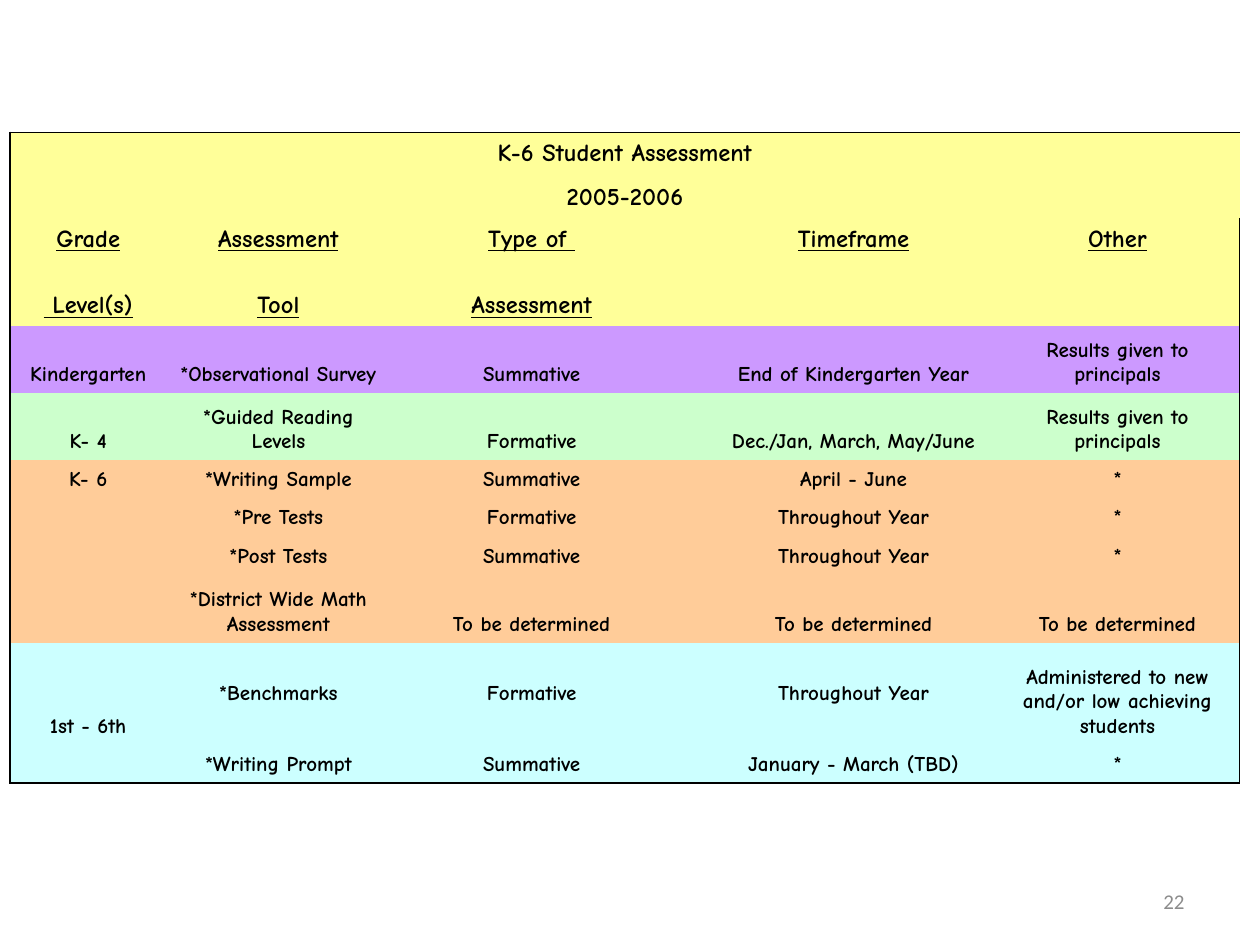
import pptx
import pptx.dml.color
import pptx.enum.text
import pptx.oxml
import pptx.oxml.ns
import pptx.util
from lxml import etree

Inches, Pt = pptx.util.Inches, pptx.util.Pt
RGB = pptx.dml.color.RGBColor.from_string
ALIGN = pptx.enum.text.PP_ALIGN
ANCHOR = pptx.enum.text.MSO_ANCHOR

COLORS = {
    "text": "000000", "border": "000000", "number": "8C8C8C",
    "heading": "FFFF99", "kindergarten": "CC99FF", "k4": "CCFFCC",
    "k6": "FFCC99", "upper": "CCFFFF",
}
NO_STYLE = "{2D5ABB26-0587-4C30-8999-92F81FD0307C}"
COLUMN_WIDTHS = [1.24, 1.78, 2.24, 0.31, 2.25, 1.94]
TEXT_COLUMNS = [0, 1, 2, 4, 5]
TITLE_ROWS, HEADING_ROWS = 2, 4
BENCHMARK_ROW = 10

# Band colour, row height, texts of the columns that hold text
ROWS = [
    ("heading", 0.33, ["K-6 Student Assessment"]),
    ("heading", 0.35, ["2005-2006"]),
    ("heading", 0.33, ["Grade", "Assessment", "Type of ", "Timeframe", "Other"]),
    ("heading", 0.53, [" Level(s)", "Tool", "Assessment", "", ""]),
    ("kindergarten", 0.53, ["Kindergarten", "*Observational Survey", "Summative",
                            "End of Kindergarten Year", "Results given to principals"]),
    ("k4", 0.53, ["K- 4", "*Guided Reading Levels", "Formative",
                  "Dec./Jan, March, May/June", "Results given to principals"]),
    ("k6", 0.3, ["K- 6", "*Writing Sample", "Summative", "April - June", "*"]),
    ("k6", 0.3, ["", "*Pre Tests", "Formative", "Throughout Year", "*"]),
    ("k6", 0.3, ["", "*Post Tests", "Summative", "Throughout Year", "*"]),
    ("k6", 0.54, ["", "*District Wide Math Assessment", "To be determined",
                  "To be determined", "To be determined"]),
    ("upper", 0.81, ["1st - 6th", "*Benchmarks", "Formative", "Throughout Year",
                     "Administered to new and/or low achieving students"]),
    ("upper", 0.3, ["", "*Writing Prompt", "Summative", "January - March (TBD)", "*"]),
]


def write_text(paragraph, text, color, alignment, **font_values):
    paragraph.alignment = alignment
    run = paragraph.add_run()
    run.text = text
    run.font.color.rgb = RGB(color)
    for name, value in font_values.items():
        setattr(run.font, name, value)


def keep_empty_line_small(paragraph):
    """An empty cell would otherwise stretch its row to fit 18 pt text."""
    end = etree.SubElement(paragraph._p, pptx.oxml.ns.qn("a:endParaRPr"))
    end.set("sz", "1200")


def add_borders(cell, sides):
    """Line the given sides (L, R, T, B, in that order) ahead of the cell's fill."""
    properties = cell._tc.get_or_add_tcPr()
    for index, side in enumerate(sides):
        properties.insert(index, pptx.oxml.parse_xml(
            f'<a:ln{side} {pptx.oxml.ns.nsdecls("a")} w="12700"><a:solidFill>'
            f'<a:srgbClr val="{COLORS["border"]}"/></a:solidFill></a:ln{side}>'))


def outer_sides(row, column):
    last_column, last_row = len(COLUMN_WIDTHS) - 1, len(ROWS) - 1
    tests = {
        "L": column == 0,
        "R": column == last_column and row >= TITLE_ROWS,
        "T": row == 0,
        "B": row == last_row,
    }
    return [side for side, applies in tests.items() if applies]


def fill_cell(cell, text, row, column, band):
    cell.fill.solid()
    cell.fill.fore_color.rgb = RGB(COLORS[band])
    centred = row == BENCHMARK_ROW and column in (1, 2, 4)
    cell.vertical_anchor = ANCHOR.MIDDLE if centred else ANCHOR.BOTTOM
    cell.margin_left = cell.margin_right = Inches(0.08)
    add_borders(cell, outer_sides(row, column))
    paragraph = cell.text_frame.paragraphs[0]
    if text:
        write_text(paragraph, text, COLORS["text"], ALIGN.CENTER,
                   name="Comic Neue", bold=True,
                   size=Pt(14 if row < HEADING_ROWS else 12),
                   underline=TITLE_ROWS <= row < HEADING_ROWS)
    else:
        keep_empty_line_small(paragraph)


def add_assessment_table(slide, left, top):
    width = sum(COLUMN_WIDTHS)
    height = sum(row_height for _, row_height, _ in ROWS)
    table = slide.shapes.add_table(
        len(ROWS), len(COLUMN_WIDTHS),
        Inches(left), Inches(top), Inches(width), Inches(height)).table
    table.first_row = table.horz_banding = False
    table._tbl.tblPr.find(pptx.oxml.ns.qn("a:tableStyleId")).text = NO_STYLE
    for column, column_width in zip(table.columns, COLUMN_WIDTHS):
        column.width = Inches(column_width)
    for row, (band, row_height, texts) in enumerate(ROWS):
        table.rows[row].height = Inches(row_height)
        by_column = dict(zip(TEXT_COLUMNS, texts))
        for column in range(len(COLUMN_WIDTHS)):
            fill_cell(table.cell(row, column), by_column.get(column, ""),
                      row, column, band)
        if row < TITLE_ROWS:
            table.cell(row, 0).merge(table.cell(row, len(COLUMN_WIDTHS) - 1))


def add_slide_number(slide, left, top, width, height):
    box = slide.shapes.add_textbox(
        Inches(left), Inches(top), Inches(width), Inches(height))
    box.text_frame.word_wrap = True
    box.text_frame.vertical_anchor = ANCHOR.MIDDLE
    write_text(box.text_frame.paragraphs[0], "22", COLORS["number"], ALIGN.RIGHT,
               name="Calibri", size=Pt(12))


def main():
    presentation = pptx.Presentation()
    presentation.slide_width = Inches(10)
    presentation.slide_height = Inches(7.5)
    slide = presentation.slides.add_slide(presentation.slide_layouts[6])
    add_assessment_table(slide, 0.08, 1.05)
    add_slide_number(slide, 7.17, 6.95, 2.33, 0.4)
    presentation.save("out.pptx")


if __name__ == "__main__":
    main()
